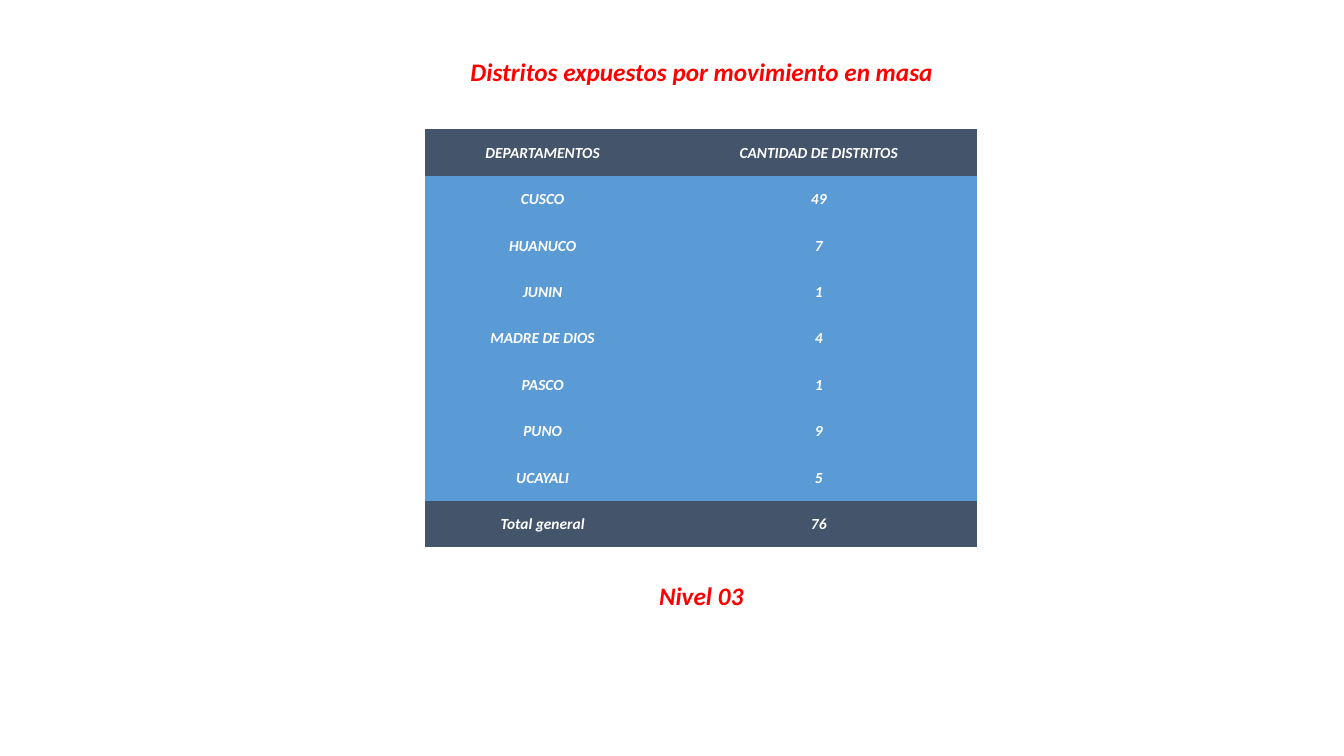
from dataclasses import dataclass

from pptx import Presentation
from pptx.dml.color import RGBColor
from pptx.enum.text import MSO_ANCHOR, PP_ALIGN
from pptx.oxml.ns import qn
from pptx.util import Inches, Pt

CENTER = PP_ALIGN.CENTER
MIDDLE = MSO_ANCHOR.MIDDLE
TOP = MSO_ANCHOR.TOP
WIDTH, HEIGHT = 13.33, 7.5
PLAIN_TABLE = "{2D5ABB26-0587-4C30-8999-92F81FD0307C}"

ROWS = [
    ("DEPARTAMENTOS", "CANTIDAD DE DISTRITOS"),
    ("CUSCO", "49"),
    ("HUANUCO", "7"),
    ("JUNIN", "1"),
    ("MADRE DE DIOS", "4"),
    ("PASCO", "1"),
    ("PUNO", "9"),
    ("UCAYALI", "5"),
    ("Total general", "76"),
]


@dataclass(frozen=True)
class Theme:
    """Colours and type sizes of the slide."""

    font: str = "Calibri"
    heading: str = "FF0000"
    cell_text: str = "FFFFFF"
    edge_row: str = "44546A"
    body_row: str = "5B9BD5"
    heading_size: int = 18
    cell_size: int = 11


THEME = Theme()


def across(percent):
    """Return a percentage of the slide width as a length."""
    return Inches(WIDTH * percent / 100)


def down(percent):
    """Return a percentage of the slide height as a length."""
    return Inches(HEIGHT * percent / 100)


def write(tf, text, size, color):
    """Fill a text frame with one centred bold italic paragraph."""
    tf.text = text
    p = tf.paragraphs[0]
    p.alignment = CENTER
    p.font.name = THEME.font
    p.font.size = Pt(size)
    p.font.bold = p.font.italic = True
    p.font.color.rgb = RGBColor.from_string(color)


def format_heading(sp, text, left, top, width, height, wrap):
    """Place a shape by slide percentages and write a red heading in it."""
    sp.left, sp.top = across(left), down(top)
    sp.width, sp.height = across(width), down(height)
    tf = sp.text_frame
    tf.word_wrap = wrap
    tf.vertical_anchor = TOP
    write(tf, text, THEME.heading_size, THEME.heading)


def fill_cell(cell, text, color):
    """Fill, align and write one table cell."""
    cell.fill.solid()
    cell.fill.fore_color.rgb = RGBColor.from_string(color)
    cell.vertical_anchor = MIDDLE
    cell.margin_left = cell.margin_right = cell.margin_top = Inches(0.01)
    cell.margin_bottom = 0
    write(cell.text_frame, text, THEME.cell_size, THEME.cell_text)


def add_district_table(s, rows, left, top, col_widths, row_height):
    """Add a table whose first and last rows are dark."""
    frame = s.shapes.add_table(
        len(rows), len(col_widths), across(left), down(top),
        across(sum(col_widths)), down(row_height * len(rows)),
    )
    table = frame.table
    table.first_row = table.horz_banding = False
    table._tbl.tblPr.find(qn("a:tableStyleId")).text = PLAIN_TABLE
    for column, width in zip(table.columns, col_widths):
        column.width = across(width)
    for i, values in enumerate(rows):
        table.rows[i].height = down(row_height)
        color = THEME.edge_row if i in (0, len(rows) - 1) else THEME.body_row
        for j, text in enumerate(values):
            fill_cell(table.cell(i, j), text, color)


def main():
    """Build the slide and save it."""
    prs = Presentation()
    prs.slide_width, prs.slide_height = Inches(WIDTH), Inches(HEIGHT)
    s = prs.slides.add_slide(prs.slide_layouts[5])
    format_heading(s.shapes.title, "Distritos expuestos por movimiento en masa",
                   34.06, 6.8, 36.3, 5.33, False)
    level = s.shapes.add_textbox(0, 0, 0, 0)
    format_heading(level, "Nivel 03", 48.16, 76.13, 8.03, 5.33, True)
    add_district_table(s, ROWS, 31.6, 17.07, (17.55, 23.55), 6.15)
    prs.save("out.pptx")


if __name__ == "__main__":
    main()
